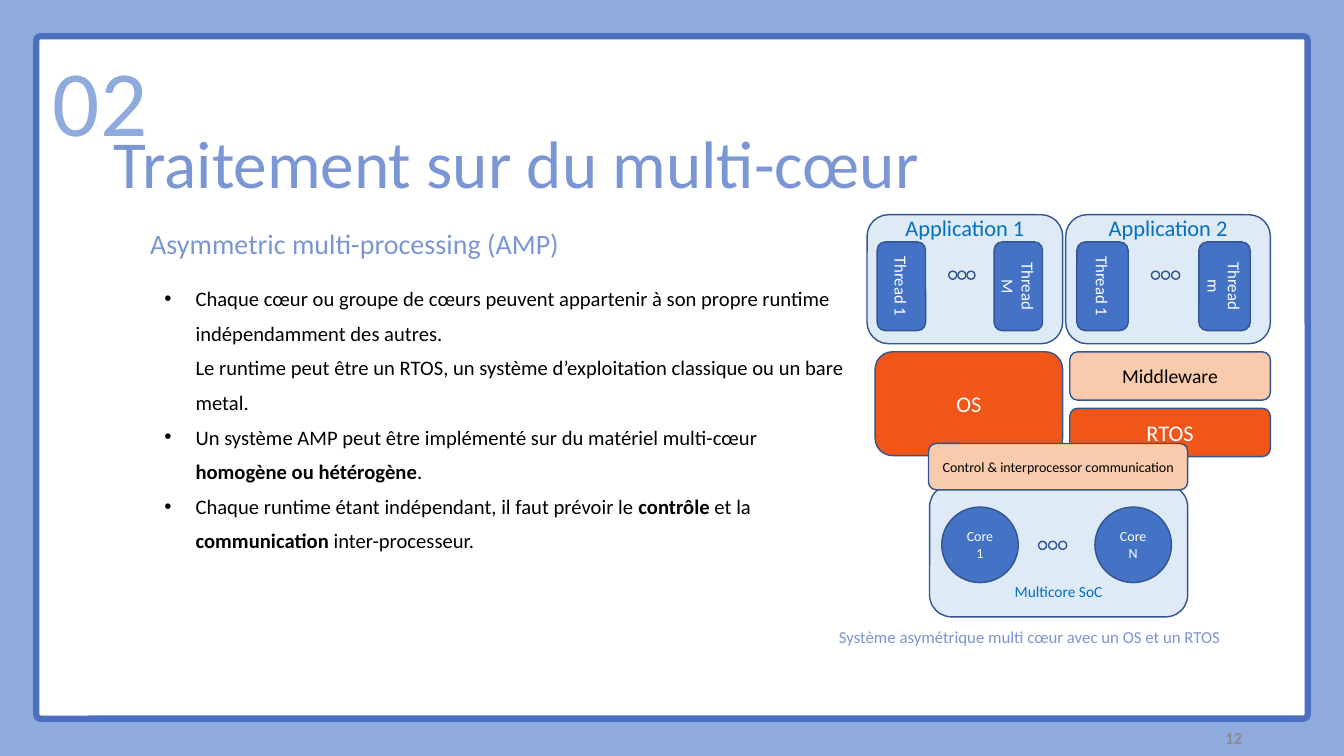
from pptx import Presentation
from pptx.dml.color import RGBColor
from pptx.enum.shapes import MSO_SHAPE
from pptx.enum.text import MSO_ANCHOR, PP_ALIGN
from pptx.oxml import parse_xml
from pptx.oxml.ns import nsdecls
from pptx.util import Inches, Pt

COLORS = {
    "frame": "4C6FBF", "background": "8FAADC", "heading": "7B96D4",
    "outline": "325491", "panel": "DEEBF7", "unit": "4472C4",
    "system": "F05618", "service": "F8CBAD", "label": "0070C0",
    "white": "FFFFFF", "black": "000000", "number": "8B8B8B",
}
ROUNDED, OVAL = MSO_SHAPE.ROUNDED_RECTANGLE, MSO_SHAPE.OVAL

presentation = Presentation()
presentation.slide_width = Inches(13.33)
presentation.slide_height = Inches(7.5)
slide = presentation.slides.add_slide(presentation.slide_layouts[6])
slide.background.fill.solid()
slide.background.fill.fore_color.rgb = RGBColor.from_string(COLORS["background"])


def add_text(place, text, size, color, spacing=1.0, align=PP_ALIGN.LEFT, bold=False):
    """Add a one-paragraph text box without margins."""
    frame = slide.shapes.add_textbox(*map(Inches, place)).text_frame
    frame.word_wrap = True
    frame.margin_left = frame.margin_right = frame.margin_top = frame.margin_bottom = 0
    paragraph = frame.paragraphs[0]
    paragraph.text = text
    paragraph.alignment = align
    paragraph.line_spacing = spacing
    paragraph.font.name = "Calibri"
    paragraph.font.size = Pt(size)
    paragraph.font.bold = bold
    paragraph.font.color.rgb = RGBColor.from_string(COLORS[color])
    return frame


def add_block(kind, place, fill=None, text="", size=12, color="white",
              line="outline", line_width=1):
    """Add an outlined shape, with centred text if any is given."""
    block = slide.shapes.add_shape(kind, *map(Inches, place))
    block.shadow.inherit = False
    block.line.color.rgb = RGBColor.from_string(COLORS[line])
    block.line.width = Pt(line_width)
    if fill:
        block.fill.solid()
        block.fill.fore_color.rgb = RGBColor.from_string(COLORS[fill])
    else:
        block.fill.background()
    if text:
        block.text_frame.vertical_anchor = MSO_ANCHOR.MIDDLE
        paragraph = block.text_frame.paragraphs[0]
        paragraph.text = text
        paragraph.alignment = PP_ALIGN.CENTER
        paragraph.font.name = "Calibri"
        paragraph.font.size = Pt(size)
        paragraph.font.color.rgb = RGBColor.from_string(COLORS[color])
    return block


page_frame = add_block(ROUNDED, (0.36, 0.36, 12.61, 6.77), "white",
                       line="frame", line_width=4.5)
page_frame.adjustments[0] = 0.006

# Headings and caption
add_text((1.49, 2.21, 5.02, 0.37), "Asymmetric multi-processing (AMP)", 20, "heading", 1.11)
add_text((1.13, 1.06, 10.77, 1.19), "Traitement sur du multi-cœur", 48, "heading", 1.18)
add_text((0.36, 0.13, 1.27, 1.42), "02", 66.6, "background", 1.27, PP_ALIGN.CENTER)
add_text((8.32, 6.2, 4.32, 0.22), "Système asymétrique multi cœur avec un OS et un RTOS",
         12, "heading", 1.11)
add_text((11.32, 7.22, 1, 0.2), "12", 12, "number", align=PP_ALIGN.RIGHT, bold=True)

# Bullet points: every second part of a point is bold
points = [
    ["Chaque cœur ou groupe de cœurs peuvent appartenir à son propre runtime "
     "indépendamment des autres.\vLe runtime peut être un RTOS, un système "
     "d’exploitation classique ou un bare metal."],
    ["Un système AMP peut être implémenté sur du matériel multi-cœur ",
     "homogène ou hétérogène", "."],
    ["Chaque runtime étant indépendant, il faut prévoir le ", "contrôle",
     " et la ", "communication", " inter-processeur."],
]
explanation = slide.shapes.add_textbox(
    Inches(1.63), Inches(2.74), Inches(6.76), Inches(3.11)).text_frame
explanation.word_wrap = True
explanation.margin_left = explanation.margin_right = 0
explanation.margin_top = explanation.margin_bottom = 0
for index, parts in enumerate(points):
    point = explanation.add_paragraph() if index else explanation.paragraphs[0]
    point.text = parts[0]
    for position, part in enumerate(parts[1:], start=1):
        run = point.add_run()
        run.text = part
        run.font.bold = position % 2 == 1
    properties = point._p.get_or_add_pPr()
    properties.set("marL", str(Inches(0.31)))
    properties.set("indent", str(-Inches(0.31)))
    point.line_spacing = 1.4
    properties.append(parse_xml(f'<a:buFont {nsdecls("a")} typeface="Arial"/>'))
    properties.append(parse_xml(f'<a:buChar {nsdecls("a")} char="•"/>'))
    point.font.name = "Calibri"
    point.font.size = Pt(14.7)
    point.font.color.rgb = RGBColor.from_string(COLORS["black"])

# Multicore chip
chip = add_block(ROUNDED, (9.22, 4.81, 2.56, 1.31), "panel", "Multicore SoC", 11, "label")
chip.text_frame.vertical_anchor = MSO_ANCHOR.BOTTOM
chip.text_frame.margin_bottom = Inches(0.1)
for left, name in [(9.34, "Core\v1"), (10.86, "Core\vN")]:
    add_block(OVAL, (left, 5.03, 0.76, 0.75), "unit", name, 10)

# Applications with their threads
applications = [
    ("Application 1", 8.6, 1.94, 0.48, [(8.7, "Thread 1"), (9.86, "Thread M")]),
    ("Application 2", 10.57, 2.03, 0.51, [(10.68, "Thread 1"), (11.89, "Thread m")]),
]
for title, left, width, thread_width, threads in applications:
    add_block(ROUNDED, (left, 2.13, width, 1.28), "panel")
    add_text((left, 2.12, width, 0.27), title, 16, "label", align=PP_ALIGN.CENTER)
    for thread_left, name in threads:
        thread = add_block(ROUNDED, (thread_left, 2.4, thread_width, 0.88), "unit", name)
        thread.text_frame._txBody.bodyPr.set("vert", "vert")

# Three small rings stand for the threads and cores in between
for middle, top, step in [(9.54, 2.69, 0.09), (11.56, 2.69, 0.1), (10.44, 5.37, 0.1)]:
    for offset in (-1, 0, 1):
        add_block(OVAL, (middle + offset * step - 0.04, top, 0.08, 0.08))

# Software layers
layers = [
    ((10.61, 4.05, 1.99, 0.48), "system", "RTOS", 16, "white"),
    ((10.61, 3.49, 1.99, 0.48), "service", "Middleware", 14, "black"),
    ((8.68, 3.49, 1.86, 1.03), "system", "OS", 16, "white"),
    ((9.21, 4.4, 2.57, 0.46), "service", "Control & interprocessor communication", 10, "black"),
]
for place, fill, name, size, color in layers:
    add_block(ROUNDED, place, fill, name, size, color)

presentation.save("out.pptx")
